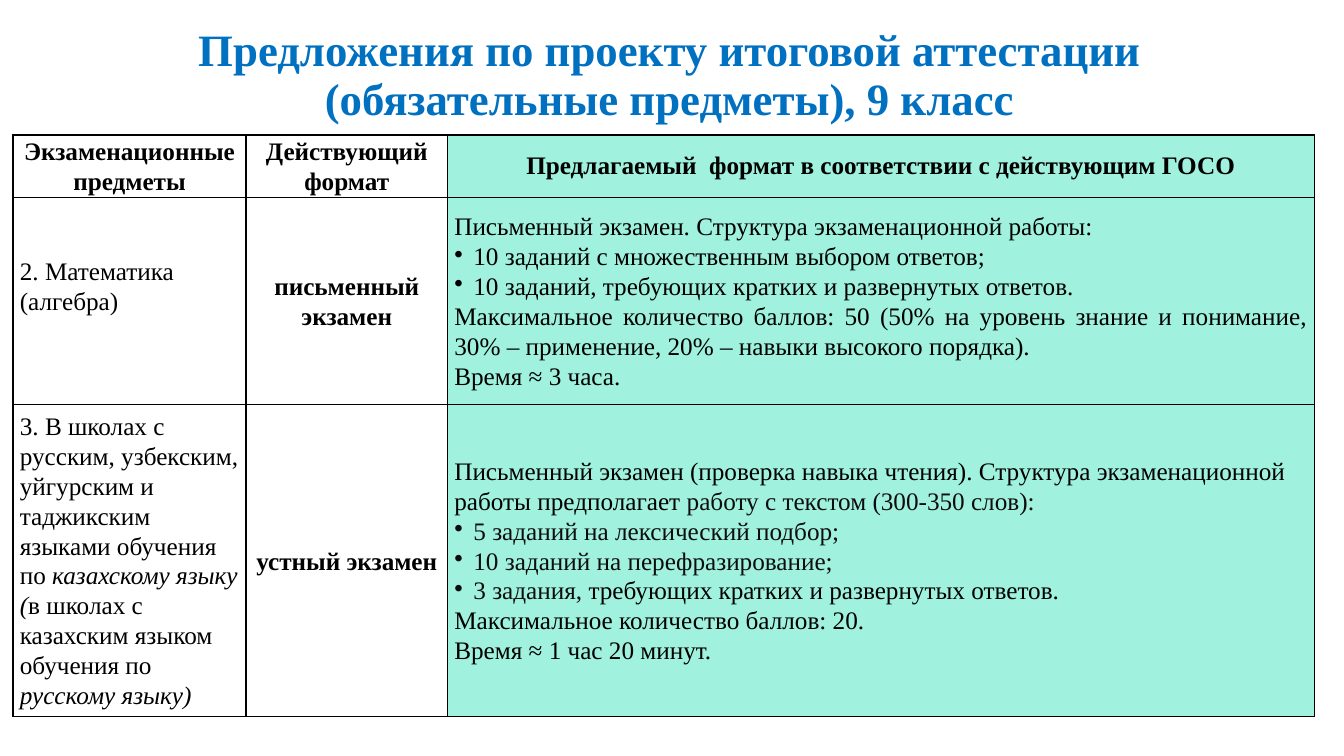
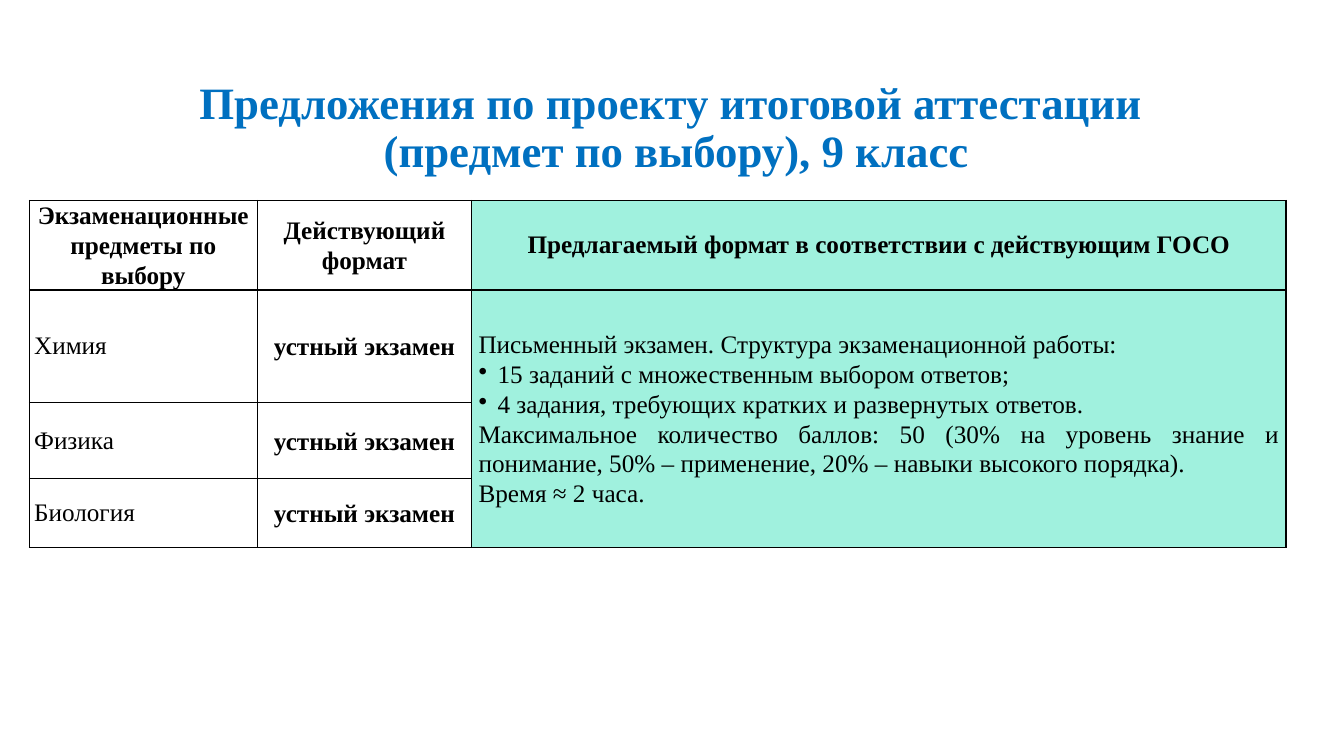
from dataclasses import dataclass

from lxml.etree import SubElement
from pptx import Presentation
from pptx.dml.color import RGBColor
from pptx.enum.shapes import MSO_SHAPE as Shape
from pptx.enum.text import MSO_ANCHOR as Anchor, MSO_AUTO_SIZE as AutoSize, PP_ALIGN as Align
from pptx.oxml import parse_xml
from pptx.oxml.ns import nsdecls, qn
from pptx.util import Cm, Pt

# Shared look
WHITE, BLACK, SOFT_BLACK = "FFFFFF", "000000", "0D0D0D"
TITLE_BLUE, PROPOSED_GREEN = "0070C0", "A0F1DE"
FONT = "Times New Roman"
TITLE_FONT = {"name": FONT, "size": Pt(32), "bold": True}
BODY_FONT = {"name": FONT, "size": Pt(18), "bold": False, "italic": False}
BOLD, ITALIC = {"bold": True}, {"italic": True}
PROPOSED_COLUMN = 2
BULLET_INDENT = Cm(0.48)

PARAGRAPH_STYLES = {
    "title": {"alignment": Align.CENTER, "line_spacing": 0.9},
    "center": {"alignment": Align.CENTER, "line_spacing": 1.07},
    "center single": {"alignment": Align.CENTER, "line_spacing": 1.0},
    "left": {"alignment": Align.LEFT, "line_spacing": 1.07},
    "left single": {"alignment": Align.LEFT, "line_spacing": 1.0},
    "justify": {"alignment": Align.JUSTIFY, "line_spacing": 1.07},
    "bullet": {"alignment": Align.LEFT, "line_spacing": 1.07},
}


@dataclass
class Entry:
    """Content of one table cell: (style, runs) pairs and margins in cm."""
    paragraphs: list
    side: float = 0.17
    bottom: float = 0


def paint(colour_format, colour):
    colour_format.rgb = RGBColor.from_string(colour)


def apply(target, formats):
    for name, value in formats.items():
        setattr(target, name, value)


def add_bullet(paragraph):
    props = paragraph._p.get_or_add_pPr()
    props.set("marL", str(BULLET_INDENT))
    props.set("indent", str(-BULLET_INDENT))
    SubElement(props, qn("a:buChar")).set("char", "•")


def write_entry(frame, paragraphs):
    for index, (style, runs) in enumerate(paragraphs):
        paragraph = frame.add_paragraph() if index else frame.paragraphs[0]
        apply(paragraph, PARAGRAPH_STYLES[style])
        if style == "bullet":
            add_bullet(paragraph)
        for text, formats, colour in runs:
            run = paragraph.add_run()
            run.text = text
            apply(run.font, {**BODY_FONT, **formats})
            paint(run.font.color, colour)


def add_borders(cell):
    props = cell._tc.get_or_add_tcPr()
    for index, side in enumerate("LRTB"):
        props.insert(index, parse_xml(
            f'<a:ln{side} {nsdecls("a")} w="{Pt(1)}"><a:solidFill>'
            f'<a:srgbClr val="{BLACK}"/></a:solidFill></a:ln{side}>'))


def add_heading(slide, band_box, title_box, title):
    # White band behind the title
    band = slide.shapes.add_shape(Shape.RECTANGLE, *map(Cm, band_box))
    band.shadow.inherit = False
    band.fill.solid()
    paint(band.fill.fore_color, WHITE)
    paint(band.line.color, WHITE)
    band.line.width = Pt(1)
    # Title
    frame = slide.shapes.add_textbox(*map(Cm, title_box)).text_frame
    apply(frame, {"word_wrap": True, "auto_size": AutoSize.NONE,
                  "vertical_anchor": Anchor.TOP})
    heading = frame.paragraphs[0]
    heading.text = title
    apply(heading, PARAGRAPH_STYLES["title"])
    for run in heading.runs:
        apply(run.font, TITLE_FONT)
        paint(run.font.color, TITLE_BLUE)


def add_exam_table(slide, corner, widths, heights, entries, merge=None):
    left, top = corner
    box = map(Cm, (left, top, sum(widths), sum(heights)))
    table = slide.shapes.add_table(len(heights), len(widths), *box).table
    apply(table, {"first_row": False, "horz_banding": False})
    for column, width in zip(table.columns, widths):
        column.width = Cm(width)
    for row, height in zip(table.rows, heights):
        row.height = Cm(height)
    # Cells
    for row, row_entries in enumerate(entries):
        for column, entry in enumerate(row_entries):
            cell = table.cell(row, column)
            cell.fill.solid()
            paint(cell.fill.fore_color,
                  PROPOSED_GREEN if column == PROPOSED_COLUMN else WHITE)
            add_borders(cell)
            if entry is None:
                continue
            apply(cell, {"vertical_anchor": Anchor.MIDDLE,
                         "margin_left": Cm(entry.side), "margin_right": Cm(entry.side),
                         "margin_top": 0, "margin_bottom": Cm(entry.bottom)})
            write_entry(cell.text_frame, entry.paragraphs)
    if merge:
        first, last = merge
        table.cell(*first).merge(table.cell(*last))


# Short forms for the content
def plain(style, text, colour=BLACK):
    return style, [(text, {}, colour)]


def strong(text, style="center"):
    return Entry([(style, [(text, BOLD, BLACK)])])


def header_row(subjects, proposed):
    return [strong(subjects), strong("Действующий формат"),
            strong(proposed, "center single")]


def build_required_subjects(slide):
    add_heading(slide, (1.57, 0, 30.61, 4.01), (1.57, 0.58, 30.61, 1.7),
                "Предложения по проекту итоговой аттестации\n"
                "(обязательные предметы), 9 класс")
    algebra = Entry([plain("left", "2. Математика (алгебра)")], bottom=0.76)
    algebra_format = Entry([
        plain("justify", "Письменный экзамен. Структура экзаменационной работы:"),
        plain("bullet", "10 заданий с множественным выбором ответов; "),
        plain("bullet", "10 заданий, требующих кратких и развернутых ответов. "),
        plain("justify", "Максимальное количество баллов: 50 (50% на уровень знание и "
                         "понимание, 30% – применение, 20% – навыки высокого порядка)."),
        plain("justify", "Время ≈ 3 часа. "),
    ])
    language = Entry([("left", [
        ("3. В школах с русским, узбекским, уйгурским и таджикским языками "
         "обучения по ", {}, BLACK),
        ("казахскому языку (", ITALIC, BLACK),
        ("в школах с казахским языком обучения по ", {}, BLACK),
        ("русскому языку)", ITALIC, BLACK),
    ])])
    language_format = Entry([
        ("left", [("Письменный экзамен (проверка навыка чтения). Структура "
                   "экзаменационной работы предполагает ", {}, BLACK),
                  ("работу с текстом (300-350 слов):", {}, SOFT_BLACK)]),
        plain("bullet", "5 заданий на лексический подбор;", SOFT_BLACK),
        plain("bullet", "10 заданий на перефразирование;", SOFT_BLACK),
        ("bullet", [("3 задания, ", {}, SOFT_BLACK),
                    ("требующих кратких и развернутых ответов.", {}, BLACK)]),
        plain("justify", "Максимальное количество баллов: 20."),
        plain("justify", "Время ≈ 1 час 20 минут. "),
    ])
    add_exam_table(slide, (0.33, 3.4), (5.87, 5.08, 21.84), (1.57, 5.23, 7.85), [
        header_row("Экзаменационные предметы",
                   "Предлагаемый  формат в соответствии с действующим ГОСО"),
        [algebra, strong("письменный экзамен"), algebra_format],
        [language, strong("устный экзамен"), language_format],
    ])


def build_elective_subjects(slide):
    add_heading(slide, (1.12, 1.57, 31.27, 4.83), (1.12, 1.9, 31.85, 1.55),
                "Предложения по проекту итоговой аттестации \n"
                "(предмет по выбору), 9 класс")
    elective_format = Entry([
        plain("left", "Письменный экзамен. Структура экзаменационной работы:"),
        plain("bullet", "15 заданий с множественным выбором ответов;"),
        plain("bullet", "4 задания, требующих кратких и развернутых ответов."),
        plain("justify", "Максимальное количество баллов: 50 (30% на уровень знание и "
                         "понимание, 50% – применение, 20% – навыки высокого порядка)."),
        plain("justify", "Время ≈ 2 часа. "),
    ])
    subjects = [
        [Entry([plain("left single", subject)], side=0.12), strong("устный экзамен"),
         None if index else elective_format]
        for index, subject in enumerate(("Химия", "Физика", "Биология"))
    ]
    header = header_row("Экзаменационные предметы по выбору",
                        "Предлагаемый формат в соответствии с действующим ГОСО")
    add_exam_table(slide, (0.74, 5.05), (5.74, 5.41, 20.52), (2.24, 2.84, 1.91, 1.73),
                   [header, *subjects],
                   merge=((1, PROPOSED_COLUMN), (3, PROPOSED_COLUMN)))


def main():
    deck = Presentation()
    apply(deck, {"slide_width": Cm(33.87), "slide_height": Cm(19.05)})
    blank = deck.slide_layouts[6]
    for build in (build_required_subjects, build_elective_subjects):
        build(deck.slides.add_slide(blank))
    deck.save("out.pptx")


if __name__ == "__main__":
    main()
